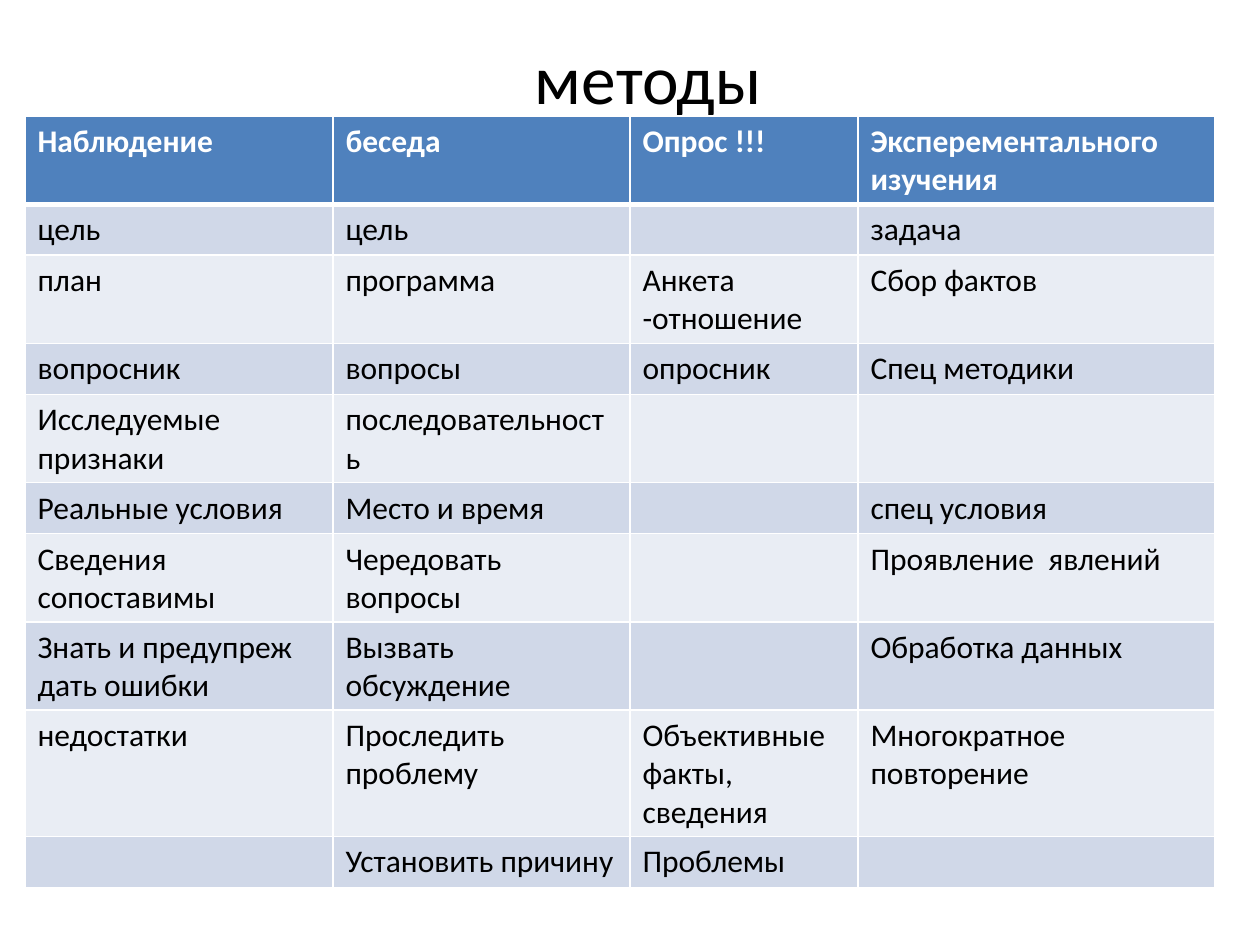
from lxml.etree import SubElement
from pptx import Presentation
from pptx.dml.color import RGBColor
from pptx.enum.text import MSO_ANCHOR, PP_ALIGN
from pptx.oxml.ns import qn
from pptx.util import Emu, Pt

EMU_PER_PX = 914400 / 126
BLACK = RGBColor(0x00, 0x00, 0x00)
WHITE = RGBColor(0xFF, 0xFF, 0xFF)
HEADER_BLUE = RGBColor(0x4F, 0x81, 0xBD)
BAND_COLORS = (RGBColor(0xE9, 0xED, 0xF4), RGBColor(0xD0, 0xD8, 0xE8))

TITLE_FORMAT = {"name": "Calibri", "size": Pt(39.6), "bold": False}
HEADER_FORMAT = {"name": "Calibri", "size": Pt(18), "bold": True}
BODY_FORMAT = {"name": "Calibri", "size": Pt(18), "bold": False}

COLUMN_WIDTHS = (308, 297, 228, 357)
ROW_HEIGHT = 51
METHODS = (
    ("Наблюдение", "беседа", "Опрос !!!", "Эксперементального изучения"),
    ("цель", "цель", "", "задача"),
    ("план", "программа", "Анкета -отношение", "Сбор фактов"),
    ("вопросник", "вопросы", "опросник", "Спец методики"),
    ("Исследуемые признаки", "последовательность", "", ""),
    ("Реальные условия", "Место и время", "", "спец условия"),
    ("Сведения сопоставимы", "Чередовать вопросы", "", "Проявление  явлений"),
    ("Знать и предупреж дать ошибки", "Вызвать обсуждение", "", "Обработка данных"),
    ("недостатки", "Проследить проблему", "Объективные факты, сведения",
     "Многократное повторение"),
    ("", "Установить причину", "Проблемы", ""),
)


def px(length):
    """Turn whole pixels into EMU."""
    return Emu(round(length * EMU_PER_PX))


def write_text(paragraph, text, font_format, color):
    """Add one formatted run to a paragraph."""
    run = paragraph.add_run()
    run.text = text
    for name, value in font_format.items():
        setattr(run.font, name, value)
    run.font.color.rgb = color


def add_title(slide, text, left, top, width, height):
    """Add the centred slide title."""
    shape = slide.shapes.add_textbox(px(left), px(top), px(width), px(height))
    frame = shape.text_frame
    frame.word_wrap = True
    frame.vertical_anchor = MSO_ANCHOR.MIDDLE
    paragraph = frame.paragraphs[0]
    paragraph.alignment = PP_ALIGN.CENTER
    write_text(paragraph, text, TITLE_FORMAT, BLACK)


def set_borders(cell, widths):
    """Draw white borders from a dict of side and width in points."""
    properties = cell._tc.get_or_add_tcPr()
    for side, width in widths.items():
        line = SubElement(properties, qn(f"a:ln{side}"), w=str(Pt(width)))
        fill = SubElement(line, qn("a:solidFill"))
        SubElement(fill, qn("a:srgbClr"), val=str(WHITE))


def fill_cell(cell, text, row_index):
    """Style and write one cell according to its row."""
    is_header = row_index == 0
    set_borders(cell, {"L": 1, "R": 1, "T": 3 if row_index == 1 else 1,
                       "B": 3 if is_header else 1})
    cell.fill.solid()
    cell.fill.fore_color.rgb = HEADER_BLUE if is_header else BAND_COLORS[row_index % 2]
    font_format, color = (HEADER_FORMAT, WHITE) if is_header else (BODY_FORMAT, BLACK)
    if text:
        write_text(cell.text_frame.paragraphs[0], text, font_format, color)


def add_methods_table(slide, left, top):
    """Add the banded table of research methods."""
    table = slide.shapes.add_table(
        len(METHODS), len(COLUMN_WIDTHS), px(left), px(top),
        px(sum(COLUMN_WIDTHS)), px(ROW_HEIGHT * len(METHODS))).table
    for column, width in zip(table.columns, COLUMN_WIDTHS):
        column.width = px(width)
    for row_index, (row, texts) in enumerate(zip(table.rows, METHODS)):
        row.height = px(ROW_HEIGHT)
        for cell, text in zip(row.cells, texts):
            fill_cell(cell, text, row_index)


def main():
    """Build and save the slide."""
    presentation = Presentation()
    presentation.slide_width = px(1260)
    presentation.slide_height = px(945)
    slide = presentation.slides.add_slide(presentation.slide_layouts[6])
    add_title(slide, " методы", 84, 38, 1113, 77)
    add_methods_table(slide, 25, 116)
    presentation.save("out.pptx")


if __name__ == "__main__":
    main()
